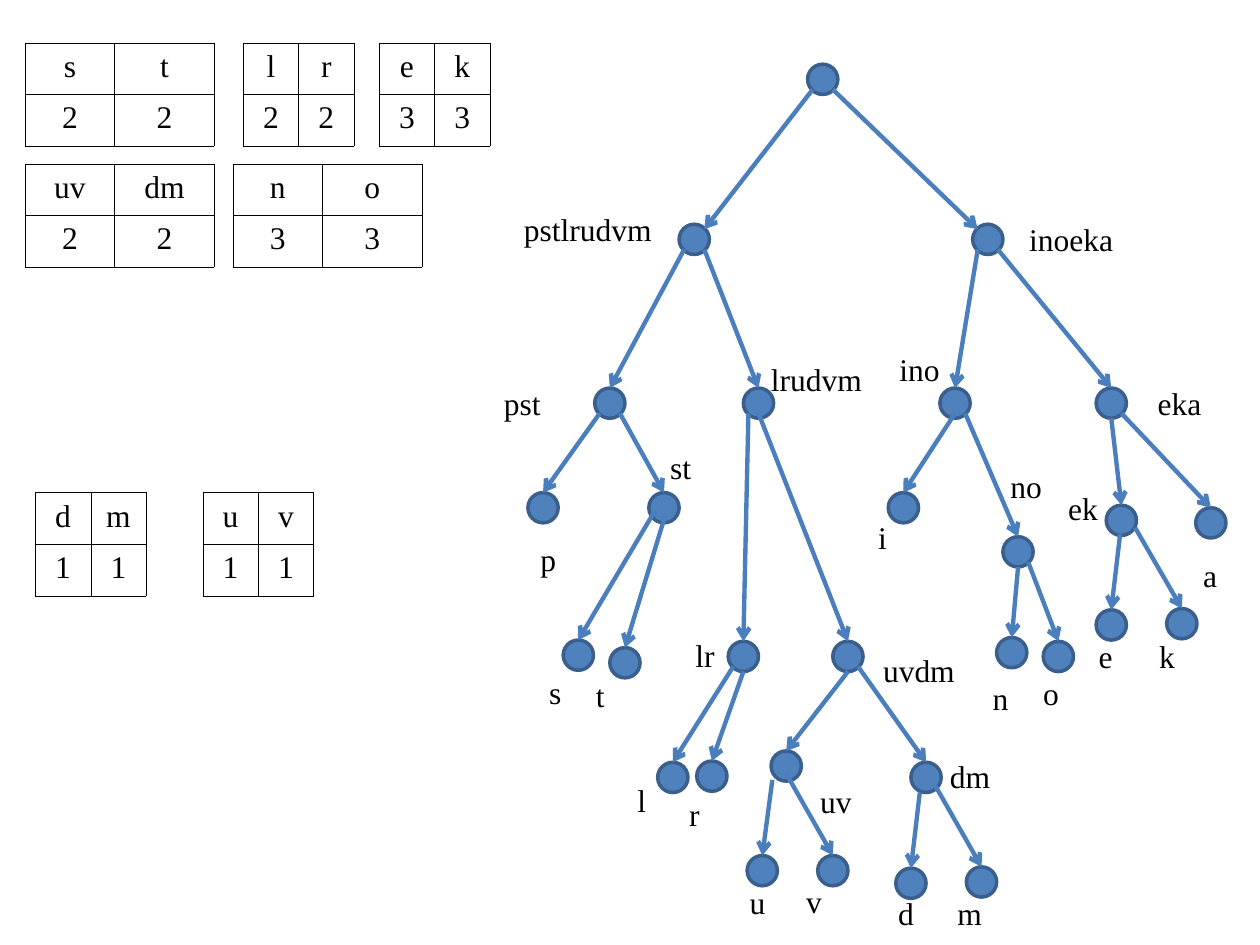
"""Draw a code tree with the merge tables beside it."""
from lxml.etree import SubElement as Sub
from pptx import Presentation
from pptx.dml.color import RGBColor
from pptx.enum.shapes import MSO_CONNECTOR as Link, MSO_SHAPE as Shape
from pptx.enum.text import MSO_AUTO_SIZE as Fit, PP_ALIGN as Align
from pptx.oxml.ns import qn
from pptx.util import Pt

PX = 9144
DOT = 24


def rgb(code):
    return RGBColor.from_string(code)


def style(para):
    for run in para.runs:
        run.font.name = "Times New Roman"
        run.font.size = Pt(18)
        run.font.color.rgb = rgb("000000")


deck = Presentation()
deck.slide_width, deck.slide_height = 1000 * PX, 750 * PX
slide = deck.slides.add_slide(deck.slide_layouts[6])
shapes = slide.shapes

# name, parent, dot x y, exit from parent dot, label box
nodes = [
    ("root", None, (641, 51), None, None),
    ("pstlrudvm", "root", (539, 178), (4, 20), (406, 162, 134, 71)),
    ("inoeka", "root", (772, 178), (20, 20), (807, 170, 150, 71)),
    ("pst", "pstlrudvm", (472, 308), (4, 20), (390, 300, 55, 40)),
    ("lrudvm", "pstlrudvm", (590, 308), (20, 20), (602, 281, 102, 71)),
    ("ino", "inoeka", (746, 308), (4, 20), (704, 273, 62, 71)),
    ("eka", "inoeka", (870, 308), (20, 20), (909, 300, 63, 71)),
    ("p", "pst", (419, 391), (4, 20), (419, 424, 28, 40)),
    ("st", "pst", (515, 391), (20, 20), (522, 351, 55, 40)),
    ("lr", "lrudvm", (578, 509), (4, 20), (542, 500, 41, 40)),
    ("uvdm", "lrudvm", (661, 509), (12, 20), (691, 512, 81, 40)),
    ("i", "ino", (705, 391), (12, 20), (687, 406, 62, 71)),
    ("no", "ino", (796, 426), (20, 20), (792, 366, 62, 71)),
    ("ek", "eka", (878, 401), (12, 24), (838, 383, 63, 71)),
    ("a", "eka", (949, 403), (20, 20), (945, 436, 63, 71)),
    ("s", "st", (447, 508), (5, 14), (426, 529, 55, 40)),
    ("t", "st", (484, 514), (13, 18), (463, 532, 55, 40)),
    ("l", "lr", (522, 605), (4, 20), (496, 615, 55, 40)),
    ("r", "lr", (553, 604), (12, 24), (537, 626, 41, 40)),
    ("uv", "uvdm", (612, 596), (12, 24), (641, 616, 55, 40)),
    ("dm", "uvdm", (723, 605), (20, 20), (744, 596, 70, 40)),
    ("e", "ek", (870, 484), (11, 23), (862, 501, 55, 40)),
    ("k", "ek", (926, 483), (23, 18), (910, 501, 55, 40)),
    ("n", "no", (791, 506), (12, 24), (778, 534, 55, 40)),
    ("o", "no", (828, 509), (20, 20), (818, 530, 55, 40)),
    ("d", "dm", (711, 689), (7, 24), (703, 705, 55, 40)),
    ("m", "dm", (767, 688), (19, 18), (750, 705, 55, 40)),
    ("u", "uv", (593, 679), (1, 23), (585, 696, 55, 40)),
    ("v", "uv", (649, 679), (12, 18), (630, 695, 55, 40)),
]
tips = {"pstlrudvm": (20, 4), "inoeka": (4, 4)}
spots = {}

for name, top, (x, y), exit, box in nodes:
    spots[name] = x, y
    dot = shapes.add_shape(Shape.OVAL, x * PX, y * PX, DOT * PX, DOT * PX)
    dot.shadow.inherit = False
    dot.fill.solid()
    dot.fill.fore_color.rgb = rgb("4F81BD")
    dot.line.color.rgb = rgb("3A5F8C")
    dot.line.width = Pt(2)
    if top is None:
        continue

    px, py = spots[top]
    tx, ty = tips.get(name, (DOT // 2, 0))
    ends = px + exit[0], py + exit[1], x + tx, y + ty
    edge = shapes.add_connector(Link.STRAIGHT, *[n * PX for n in ends])
    edge.line.color.rgb = rgb("4B7EBC")
    edge.line.width = Pt(2.5)
    Sub(edge.line._get_or_add_ln(), qn("a:tailEnd"), type="arrow")
    Sub(edge._element.spPr, qn("a:effectLst"))

    frame = shapes.add_textbox(*[n * PX for n in box]).text_frame
    frame.word_wrap = True
    frame.auto_size = Fit.SHAPE_TO_FIT_TEXT
    frame.text = name
    style(frame.paragraphs[0])

wide, slim = (71, 79), (44, 44)
grids = [
    (20, 34, wide, "s t", 2),
    (193, 34, slim, "l r", 2),
    (301, 34, slim, "e k", 3),
    (20, 130, wide, "uv dm", 2),
    (185, 130, wide, "n o", 3),
    (28, 391, slim, "d m", 1),
    (161, 391, slim, "u v", 1),
]
for x, y, cols, keys, count in grids:
    table = shapes.add_table(2, 2, x * PX, y * PX, sum(cols) * PX, 82 * PX).table
    table.first_row = table.horz_banding = False
    for c, (key, width) in enumerate(zip(keys.split(), cols)):
        table.columns[c].width = width * PX
        for r, text in enumerate((key, str(count))):
            cell = table.cell(r, c)
            cell.text = text
            para = cell.text_frame.paragraphs[0]
            para.alignment = Align.CENTER
            style(para)
            props = cell._tc.get_or_add_tcPr()
            for side in ("lnL", "lnR", "lnT", "lnB"):
                line = Sub(props, qn("a:" + side), w=str(Pt(0.25)))
                Sub(Sub(line, qn("a:solidFill")), qn("a:srgbClr"), val="000000")
            cell.fill.solid()
            cell.fill.fore_color.rgb = rgb("FFFFFF")

deck.save("out.pptx")
